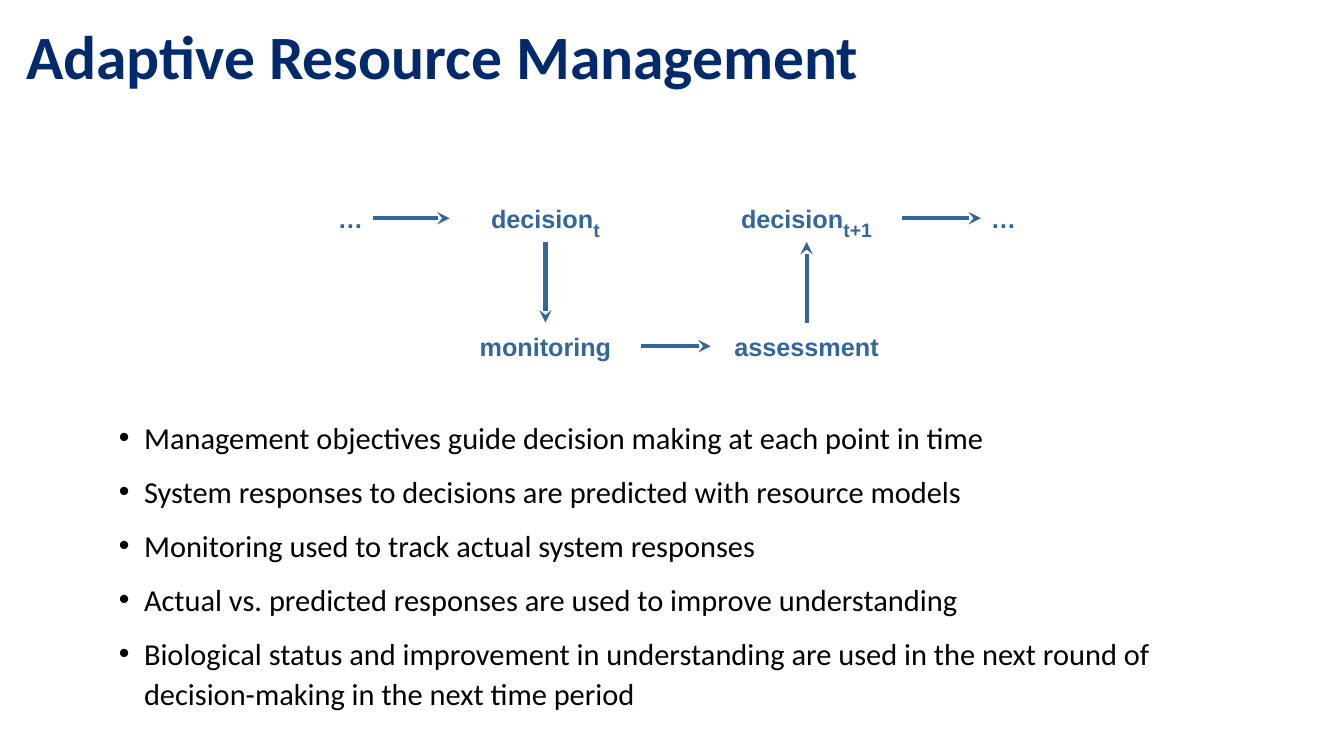
"""Build the Adaptive Resource Management slide."""
from dataclasses import dataclass

from lxml import etree
from pptx import Presentation
from pptx import util as u
from pptx.dml.color import RGBColor
from pptx.enum import shapes, text
from pptx.oxml import ns

NAVY = RGBColor(0x00, 0x2A, 0x6C)
STEEL = RGBColor(0x33, 0x66, 0x99)
BLACK = RGBColor(0x00, 0x00, 0x00)
TOP, LEFT, BOTTOM, RIGHT = range(4)
DECISION_ROW, LEARNING_ROW = 1.93, 3.2
STEP_HEIGHT = 0.47


@dataclass(frozen=True)
class Step:
    key: str
    label: str
    left: float
    top: float
    width: float = 1.9
    subscript: str = ""
    align: text.PP_ALIGN = text.PP_ALIGN.CENTER


@dataclass(frozen=True)
class Flow:
    source: str
    source_side: int
    target: str
    target_side: int


STEPS = (
    Step("past", "…", 2.17, DECISION_ROW, 1.53, align=text.PP_ALIGN.RIGHT),
    Step("now", "decision", 4.46, DECISION_ROW, subscript="t"),
    Step("monitoring", "monitoring", 4.46, LEARNING_ROW),
    Step("assessment", "assessment", 7.05, LEARNING_ROW),
    Step("next", "decision", 7.05, DECISION_ROW, subscript="t+1"),
    Step("future", "…", 9.73, DECISION_ROW, 1.52, align=text.PP_ALIGN.LEFT),
)
FLOWS = (
    Flow("past", RIGHT, "now", LEFT),
    Flow("now", BOTTOM, "monitoring", TOP),
    Flow("monitoring", RIGHT, "assessment", LEFT),
    Flow("assessment", TOP, "next", BOTTOM),
    Flow("next", RIGHT, "future", LEFT),
)
PRINCIPLES = (
    "Management objectives guide decision making at each point in time",
    "System responses to decisions are predicted with resource models",
    "Monitoring used to track actual system responses",
    "Actual vs. predicted responses are used to improve understanding",
    "Biological status and improvement in understanding are used in the next round of "
    "decision-making in the next time period",
)


def apply_format(target, values: dict) -> None:
    """Set each named attribute on the target."""
    for name, value in values.items():
        setattr(target, name, value)


def add_box(slide, left: float, top: float, width: float, height: float, **frame_format):
    """Add a text box with the given frame settings."""
    box = slide.shapes.add_textbox(*map(u.Inches, (left, top, width, height)))
    apply_format(box.text_frame, frame_format)
    return box


def add_run(paragraph, wording: str, font: str, size: float, color: RGBColor, bold: bool):
    """Append a formatted run to the paragraph."""
    run = paragraph.add_run()
    run.text = wording
    apply_format(run.font, {"name": font, "size": u.Pt(size), "bold": bold})
    run.font.color.rgb = color
    return run


def add_title(slide) -> None:
    """Add the slide heading."""
    heading = add_box(slide, 0.16, 0, 12.99, 1.18, word_wrap=True,
                      vertical_anchor=text.MSO_ANCHOR.MIDDLE)
    paragraph = heading.text_frame.paragraphs[0]
    paragraph.line_spacing = 0.9
    add_run(paragraph, "Adaptive Resource Management", "Calibri", 44, NAVY, True)


def add_principles(slide) -> None:
    """Add the bulleted principles."""
    frame = add_box(slide, 1.08, 4.07, 11.59, 3.22, word_wrap=True).text_frame
    for index, principle in enumerate(PRINCIPLES):
        paragraph = frame.add_paragraph() if index else frame.paragraphs[0]
        properties = paragraph._p.get_or_add_pPr()
        properties.set("marL", str(u.Inches(0.25)))
        properties.set("indent", str(u.Inches(-0.25)))
        etree.SubElement(properties, ns.qn("a:buFont"), typeface="Arial")
        etree.SubElement(properties, ns.qn("a:buChar"), char="•")
        apply_format(paragraph, {"line_spacing": 1.1, "space_before": u.Pt(10 if index else 0)})
        add_run(paragraph, principle, "Calibri", 21.7, BLACK, False)


def add_step(slide, step: Step):
    """Add one step of the decision cycle."""
    margins = {f"margin_{side}": u.Inches(0.1) for side in ("left", "top", "right", "bottom")}
    box = add_box(slide, step.left, step.top, step.width, STEP_HEIGHT, word_wrap=False,
                  vertical_anchor=text.MSO_ANCHOR.MIDDLE, **margins)
    paragraph = box.text_frame.paragraphs[0]
    paragraph.alignment = step.align
    add_run(paragraph, step.label, "Arial", 18, STEEL, True)
    if step.subscript:
        subscript = add_run(paragraph, step.subscript, "Arial", 24, STEEL, True)
        subscript.font._element.set("baseline", "-25000")
    return box


def add_flow(slide, flow: Flow, boxes: dict) -> None:
    """Join two steps with an arrow."""
    arrow = slide.shapes.add_connector(shapes.MSO_CONNECTOR.STRAIGHT, 0, 0, 0, 0)
    arrow.begin_connect(boxes[flow.source], flow.source_side)
    arrow.end_connect(boxes[flow.target], flow.target_side)
    arrow.line.width = u.Pt(3)
    arrow.line.color.rgb = STEEL
    etree.SubElement(arrow.line._get_or_add_ln(), ns.qn("a:tailEnd"), type="stealth")
    etree.SubElement(arrow._element.spPr, ns.qn("a:effectLst"))


def main() -> None:
    """Create and save the presentation."""
    deck = Presentation()
    apply_format(deck, {"slide_width": u.Inches(13.33), "slide_height": u.Inches(7.5)})
    slide = deck.slides.add_slide(deck.slide_layouts[6])
    add_title(slide)
    add_principles(slide)
    boxes = {step.key: add_step(slide, step) for step in STEPS}
    for flow in FLOWS:
        add_flow(slide, flow, boxes)
    deck.save("out.pptx")


if __name__ == "__main__":
    main()
